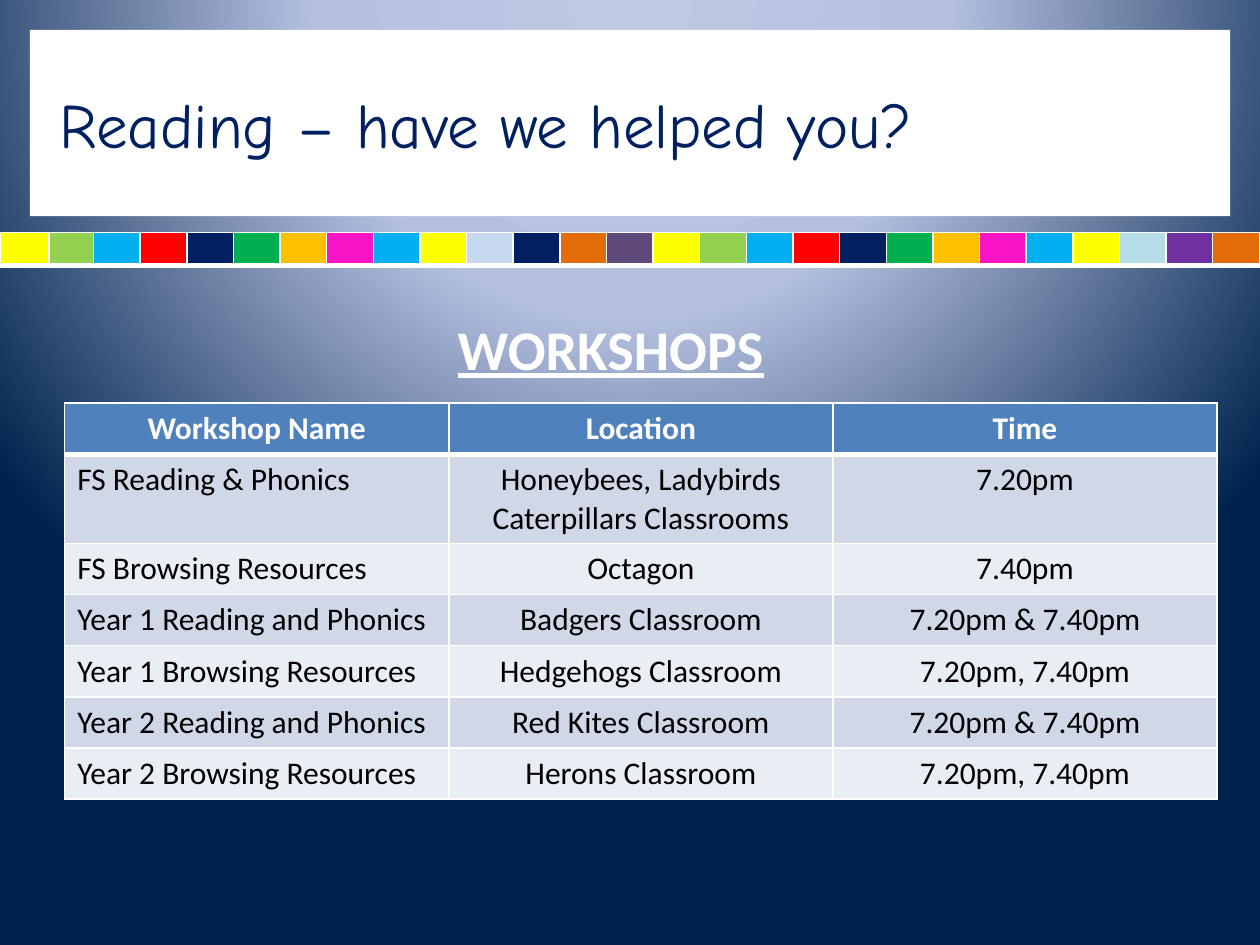
from pptx import Presentation
from pptx.dml.color import RGBColor
from pptx.enum.text import MSO_ANCHOR, MSO_AUTO_SIZE, PP_ALIGN
from pptx.oxml import parse_xml
from pptx.oxml.ns import nsdecls
from pptx.util import Pt

LEFT, CENTER = PP_ALIGN.LEFT, PP_ALIGN.CENTER
MIDDLE = MSO_ANCHOR.MIDDLE
NO_AUTOFIT = MSO_AUTO_SIZE.NONE
TITLE_ONLY = 5

COLORS = {
    "white": "FFFFFF", "black": "000000", "navy": "002060",
    "header": "4F81BD", "band": "D0D8E8", "light band": "E9EDF4",
    "yellow": "FFFF00", "lime": "92D050", "sky": "00B0F0", "red": "FF0000",
    "green": "00B050", "amber": "FFC000", "pink": "F715C7", "pale blue": "C6D9F1",
    "orange": "E46C0A", "plum": "604A7B", "pale aqua": "B7DEE8", "purple": "7030A0",
}
BACKGROUND_STOPS = [(0, "BFC9E5"), (40, "B5C0E0"), (100, "00234D")]

RAINBOW = ["yellow", "lime", "sky", "red", "navy", "green", "amber", "pink", "sky", "yellow"]
STRIP = RAINBOW + ["pale blue", "navy", "orange", "plum"] + RAINBOW + [
    "pale aqua", "purple", "orange"]

WORKSHOPS = [
    ("Workshop Name", "Location", "Time"),
    ("FS Reading & Phonics", "Honeybees, Ladybirds Caterpillars Classrooms", "7.20pm"),
    ("FS Browsing Resources", "Octagon", "7.40pm"),
    ("Year 1 Reading and Phonics", "Badgers Classroom", "7.20pm & 7.40pm"),
    ("Year 1 Browsing Resources", "Hedgehogs Classroom", "7.20pm, 7.40pm"),
    ("Year 2 Reading and Phonics", "Red Kites Classroom", "7.20pm & 7.40pm"),
    ("Year 2 Browsing Resources", "Herons Classroom", "7.20pm, 7.40pm"),
]

TITLE_FONT = {"name": "Comic Neue", "size": Pt(36), "bold": False}
HEADING_FONT = {"name": "Calibri", "size": Pt(32), "bold": True, "underline": True}
HEADER_FONT = {"name": "Calibri", "size": Pt(18), "bold": True}
CELL_FONT = {"name": "Calibri", "size": Pt(18), "bold": False}


def rgb(color):
    return RGBColor.from_string(COLORS[color])


def write_text(frame, text, font, color, align):
    para = frame.paragraphs[0]
    para.alignment = align
    span = para.add_run()
    span.text = text
    for name, value in font.items():
        setattr(span.font, name, value)
    span.font.color.rgb = rgb(color)


def set_background(slide):
    """Fill the slide with a circular gradient centred above its top edge."""
    stops = "".join(
        f'<a:gs pos="{position * 1000}"><a:srgbClr val="{color}"/></a:gs>'
        for position, color in BACKGROUND_STOPS)
    slide.element.cSld.insert(0, parse_xml(
        f'<p:bg {nsdecls("p", "a")}><p:bgPr><a:gradFill rotWithShape="1">'
        f'<a:gsLst>{stops}</a:gsLst><a:path path="circle">'
        '<a:fillToRect l="50000" t="-80000" r="50000" b="180000"/></a:path>'
        '</a:gradFill><a:effectLst/></p:bgPr></p:bg>'))


def style_cell(cell, color, top=1, bottom=1):
    """Give the cell white borders (widths in points) and a solid fill."""
    properties = cell._tc.get_or_add_tcPr()
    for side, width in {"L": 1, "R": 1, "T": top, "B": bottom}.items():
        properties.append(parse_xml(
            f'<a:ln{side} {nsdecls("a")} w="{Pt(width)}"><a:solidFill>'
            f'<a:srgbClr val="{COLORS["white"]}"/></a:solidFill></a:ln{side}>'))
    cell.fill.solid()
    cell.fill.fore_color.rgb = rgb(color)


def add_grid(slide, left, top, widths, heights):
    frame = slide.shapes.add_table(
        len(heights), len(widths), Pt(left), Pt(top), Pt(sum(widths)), Pt(sum(heights)))
    table = frame.table
    for column, width in zip(table.columns, widths):
        column.width = Pt(width)
    for row, height in zip(table.rows, heights):
        row.height = Pt(height)
    return table


def add_title(slide):
    title = slide.shapes.title
    title.left, title.top, title.width, title.height = Pt(17), Pt(17), Pt(686), Pt(106.5)
    title.fill.solid()
    title.fill.fore_color.rgb = rgb("white")
    frame = title.text_frame
    frame.auto_size = NO_AUTOFIT
    frame.vertical_anchor = MIDDLE
    frame.margin_left = Pt(17)
    write_text(frame, "Reading – have we helped you?", TITLE_FONT, "navy", LEFT)


def add_color_strip(slide):
    widths = [28, 25.5] + [26.66] * (len(STRIP) - 2)
    table = add_grid(slide, 0, 132.8, widths, [19])
    for cell, color in zip(table.iter_cells(), STRIP):
        cell.margin_left = cell.margin_right = cell.margin_top = cell.margin_bottom = 0
        cell.text_frame.paragraphs[0]._p.get_or_add_endParaRPr().set("sz", "800")
        style_cell(cell, color, bottom=3)


def add_heading(slide):
    box = slide.shapes.add_textbox(Pt(25), Pt(176), Pt(648), Pt(50))
    box.text_frame.word_wrap = True
    write_text(box.text_frame, "WORKSHOPS", HEADING_FONT, "white", CENTER)


def add_workshop_table(slide):
    heights = [29.2, 51] + [29.2] * (len(WORKSHOPS) - 2)
    table = add_grid(slide, 37, 230.4, [219.5] * 3, heights)
    for row, texts in enumerate(WORKSHOPS):
        is_header = row == 0
        band = "band" if row % 2 else "light band"
        for column, text in enumerate(texts):
            cell = table.cell(row, column)
            style_cell(cell, "header" if is_header else band,
                       top=3 if row == 1 else 1, bottom=3 if is_header else 1)
            write_text(cell.text_frame, text,
                       HEADER_FONT if is_header else CELL_FONT,
                       "white" if is_header else "black",
                       CENTER if is_header or column else LEFT)


def main():
    deck = Presentation()
    deck.slide_width, deck.slide_height = Pt(720), Pt(540)
    slide = deck.slides.add_slide(deck.slide_layouts[TITLE_ONLY])
    set_background(slide)
    add_title(slide)
    add_color_strip(slide)
    add_heading(slide)
    add_workshop_table(slide)
    deck.save("out.pptx")


if __name__ == "__main__":
    main()
